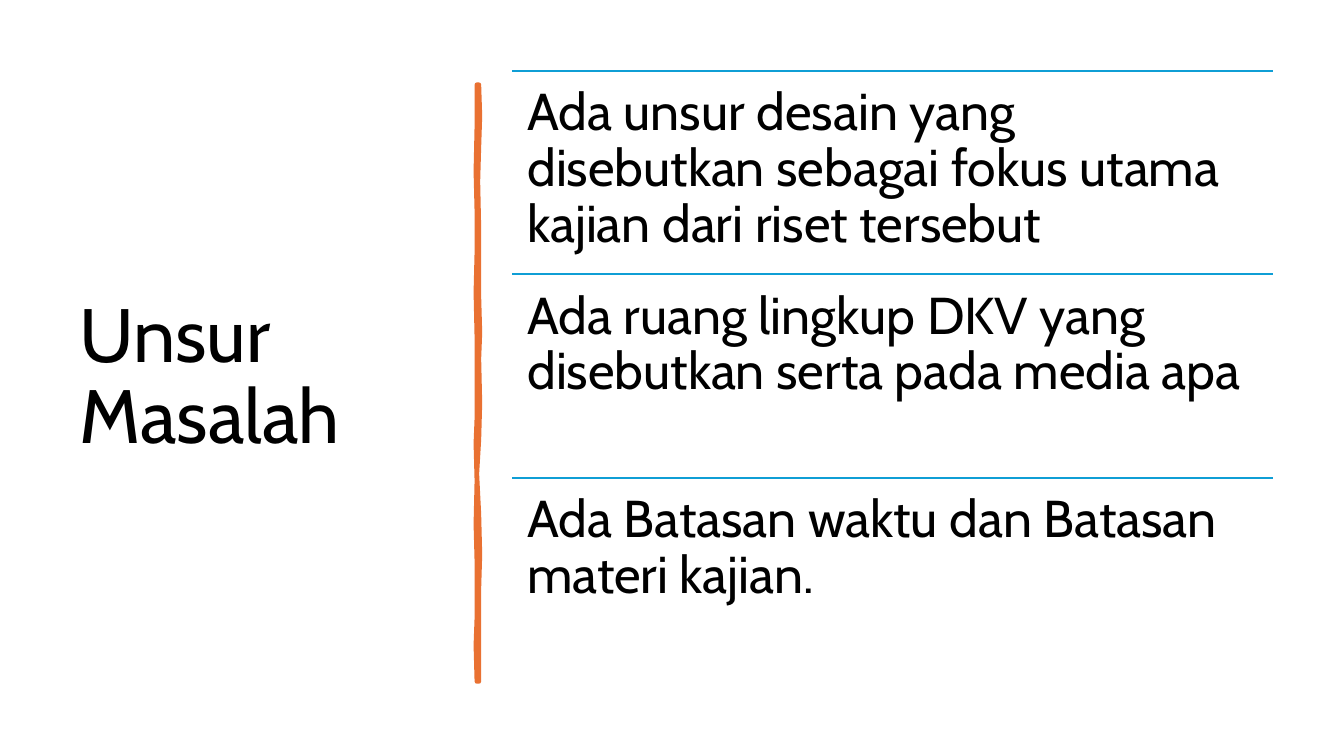
import pptx
import pptx.util
import pptx.dml.color
import pptx.enum.shapes
import pptx.enum.text
import lxml.etree

Inches = pptx.util.Inches
Pt = pptx.util.Pt
RGB = pptx.dml.color.RGBColor
BLACK = RGB(0x00, 0x00, 0x00)
WHITE = RGB(0xFF, 0xFF, 0xFF)
ORANGE = RGB(0xE9, 0x71, 0x32)
BLUE = RGB(0x0F, 0x9E, 0xD5)
NS = "http://schemas.openxmlformats.org/drawingml/2006/main"


class Deck:
    """Hold the style and the current slide, and add its elements."""

    def __init__(self, font):
        self.font = font
        self.prs = pptx.Presentation()
        self.prs.slide_width = Inches(13.33)
        self.prs.slide_height = Inches(7.5)
        self.slide = self.prs.slides.add_slide(self.prs.slide_layouts[5])
        fill = self.slide.background.fill
        fill.solid()
        fill.fore_color.rgb = WHITE

    def put(self, frame, text, size, anchor):
        frame.word_wrap = True
        frame.auto_size = pptx.enum.text.MSO_AUTO_SIZE.NONE
        frame.vertical_anchor = anchor
        para = frame.paragraphs[0]
        para.alignment = pptx.enum.text.PP_ALIGN.LEFT
        para.line_spacing = 0.9
        run = para.add_run()
        run.text = text
        run.font.name = self.font
        run.font.size = Pt(size)
        run.font.color.rgb = BLACK

    def title(self, text, left, top, width, height):
        shape = self.slide.shapes.title
        shape.left, shape.top = Inches(left), Inches(top)
        shape.width, shape.height = Inches(width), Inches(height)
        self.put(shape.text_frame, text, 54, pptx.enum.text.MSO_ANCHOR.MIDDLE)

    def text(self, text, left, top, width, height):
        box = self.slide.shapes.add_textbox(
            Inches(left), Inches(top), Inches(width), Inches(height))
        frame = box.text_frame
        frame.margin_left = frame.margin_right = Inches(0.15)
        frame.margin_top = frame.margin_bottom = Inches(0.15)
        self.put(frame, text, 37, pptx.enum.text.MSO_ANCHOR.TOP)

    def rule(self, left, top, width):
        line = self.slide.shapes.add_connector(
            pptx.enum.shapes.MSO_CONNECTOR.STRAIGHT,
            Inches(left), Inches(top), Inches(left + width), Inches(top))
        line.line.color.rgb = BLUE
        line.line.width = Pt(1.5)
        lxml.etree.SubElement(line._element.spPr, f"{{{NS}}}effectLst")

    def stroke(self, points):
        start, *rest = [(Inches(x), Inches(y)) for x, y in points]
        build = self.slide.shapes.build_freeform(*start)
        build.add_line_segments(rest, close=True)
        shape = build.convert_to_shape()
        shape.shadow.inherit = False
        shape.fill.solid()
        shape.fill.fore_color.rgb = ORANGE
        shape.line.color.rgb = ORANGE
        shape.line.width = Pt(3.25)


RIGHT = [(4.75, 0.84), (4.76, 1.15), (4.75, 1.46), (4.74, 1.8), (4.75, 2.26),
         (4.75, 2.94), (4.76, 3.3), (4.75, 3.56), (4.76, 4.0), (4.75, 4.36),
         (4.73, 4.7), (4.75, 5.1), (4.76, 5.5), (4.75, 5.84), (4.75, 6.76)]
LEFT = [(4.73, 6.76), (4.72, 6.4), (4.73, 6.13), (4.73, 5.57), (4.72, 5.2),
        (4.73, 4.77), (4.72, 4.4), (4.73, 4.15), (4.73, 3.35), (4.72, 2.9),
        (4.73, 2.5), (4.73, 2.1), (4.72, 1.7), (4.73, 1.25), (4.73, 0.84)]
ITEMS = [
    "Ada unsur desain yang disebutkan sebagai fokus utama kajian dari riset tersebut",
    "Ada ruang lingkup DKV yang disebutkan serta pada media apa",
    "Ada Batasan waktu dan Batasan materi kajian.",
]


def main():
    deck = Deck("Cabin")
    deck.title("Unsur Masalah", 0.69, 0.7, 3.74, 6.11)
    deck.stroke(RIGHT + LEFT)
    left, top, width, step = 5.08, 0.7, 7.55, 2.02
    for i, item in enumerate(ITEMS):
        deck.rule(left, top + i * step, width)
        deck.text(item, left, top + i * step, width, step)
    deck.prs.save("out.pptx")


if __name__ == "__main__":
    main()
